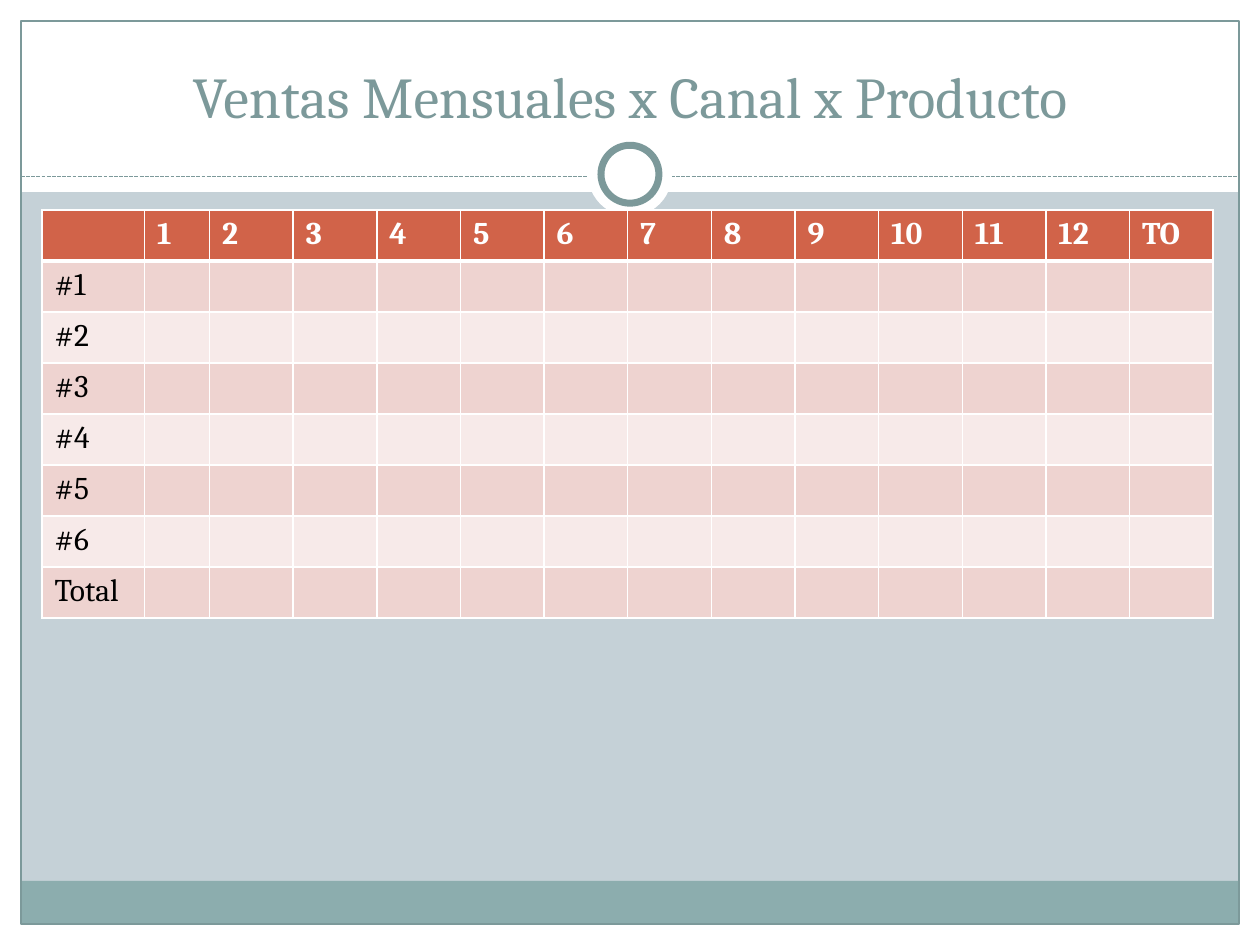
import lxml.etree
import pptx
import pptx.dml.color
import pptx.enum.dml
import pptx.enum.shapes
import pptx.enum.text
import pptx.oxml.ns
import pptx.util

CELL = pptx.util.Inches(10) / 60
COLUMNS, ROWS = 60, 45
FONT = "Cambria"
WHITE, TEAL, FOOTER = "FFFFFF", "7C999A", "8CADAE"
HEADER_FILL, BANDS = "D16349", ("EED3D0", "F7EAE9")
SHAPES = pptx.enum.shapes.MSO_SHAPE


def grid(*lengths):
    return [round(length * CELL) for length in lengths]


def color(value):
    return pptx.dml.color.RGBColor.from_string(value)


def add_xml(parent, tag, **attributes):
    return lxml.etree.SubElement(parent, pptx.oxml.ns.qn(tag), **attributes)


def add_shape(slide, kind, box, fill=None, line=None, weight=0.75):
    shape = slide.shapes.add_shape(kind, *grid(*box))
    shape.shadow.inherit = False
    if fill:
        shape.fill.solid()
        shape.fill.fore_color.rgb = color(fill)
    else:
        shape.fill.background()
    if line:
        shape.line.color.rgb = color(line)
        shape.line.width = pptx.util.Pt(weight)
    else:
        shape.line.fill.background()
    return shape


def style_text(text_frame, size, font_color, bold=False):
    for paragraph in text_frame.paragraphs:
        for run in paragraph.runs:
            run.font.name = FONT
            run.font.size = pptx.util.Pt(size)
            run.font.bold = bold
            run.font.color.rgb = color(font_color)


def add_frame(slide, box, margin, header_height):
    left, top, width, height = box
    right, bottom = left + width - margin, top + height - margin
    inner_width = width - 2 * margin
    for edge in (
        (left, bottom, width, margin),
        (left, top, width, header_height),
        (left, top, margin, height),
        (right, top, margin, height),
    ):
        add_shape(slide, SHAPES.RECTANGLE, edge, WHITE)
    footer_height = 2.05
    add_shape(slide, SHAPES.RECTANGLE,
              (left + margin, bottom - footer_height, inner_width, footer_height), FOOTER)
    add_shape(slide, SHAPES.RECTANGLE,
              (left + margin, top + margin, inner_width, height - 2 * margin), line=TEAL)


def add_divider(slide, box):
    left, top, width, height = box
    line = slide.shapes.add_connector(
        pptx.enum.shapes.MSO_CONNECTOR.STRAIGHT,
        *grid(left, top + height * 0.525, left + width, top + height * 0.525))
    line.line.color.rgb = color(TEAL)
    line.line.width = pptx.util.Pt(0.75)
    line.line.dash_style = pptx.enum.dml.MSO_LINE.SQUARE_DOT
    add_xml(line._element.spPr, "a:effectLst")
    for diameter, outline in ((height, None), (height * 0.69, TEAL)):
        circle = (left + (width - diameter) / 2, top + (height - diameter) / 2,
                  diameter, diameter)
        add_shape(slide, SHAPES.OVAL, circle, WHITE, outline, 4)


def add_title(slide, box, text):
    title = slide.shapes.add_textbox(*grid(*box))
    text_frame = title.text_frame
    text_frame.word_wrap = True
    text_frame.vertical_anchor = pptx.enum.text.MSO_ANCHOR.BOTTOM
    text_frame.text = text
    text_frame.paragraphs[0].alignment = pptx.enum.text.PP_ALIGN.CENTER
    style_text(text_frame, 33, TEAL)


def set_borders(cell, top, bottom):
    properties = cell._tc.get_or_add_tcPr()
    for side, weight in (("L", 1), ("R", 1), ("T", top), ("B", bottom)):
        border = add_xml(properties, f"a:ln{side}", w=str(pptx.util.Pt(weight)))
        add_xml(add_xml(border, "a:solidFill"), "a:srgbClr", val=WHITE)


def add_sales_table(slide, box, headings, labels):
    width, height = box[2:]
    row_count, column_count = len(labels) + 1, len(headings) + 1
    frame = slide.shapes.add_table(row_count, column_count, *grid(*box))
    table = frame.table
    table.first_row = table.horz_banding = False
    first_widths = [4.88, 3.1]
    other_count = column_count - len(first_widths)
    other_width = (width - sum(first_widths)) / other_count
    for column, length in zip(table.columns, first_widths + [other_width] * other_count):
        column.width = grid(length)[0]
    for row_index, row in enumerate(table.rows):
        row.height = grid(height / row_count)[0]
        is_header = row_index == 0
        fill = HEADER_FILL if is_header else BANDS[(row_index - 1) % 2]
        texts = [""] + headings if is_header else [labels[row_index - 1]]
        for column_index, cell in enumerate(row.cells):
            set_borders(cell, 3 if row_index == 1 else 1, 3 if is_header else 1)
            cell.fill.solid()
            cell.fill.fore_color.rgb = color(fill)
            if column_index < len(texts) and texts[column_index]:
                cell.text_frame.text = texts[column_index]
                style_text(cell.text_frame, 18, WHITE if is_header else "000000", is_header)


def main():
    presentation = pptx.Presentation()
    presentation.slide_width, presentation.slide_height = grid(COLUMNS, ROWS)
    slide = presentation.slides.add_slide(presentation.slide_layouts[6])
    slide.background.fill.solid()
    slide.background.fill.fore_color.rgb = color("C5D1D7")
    add_frame(slide, (0, 0, COLUMNS, ROWS), margin=1, header_height=9.14)
    add_divider(slide, (1, 6.3, COLUMNS - 2, 4))
    add_title(slide, (2, 1.5, COLUMNS - 4, 5), "Ventas Mensuales x Canal x Producto")
    months = [str(month) for month in range(1, 13)]
    products = [f"#{number}" for number in range(1, 7)]
    add_sales_table(slide, (2, 10, 55.8, 19.44), months + ["TO"], products + ["Total"])
    presentation.save("out.pptx")


if __name__ == "__main__":
    main()
